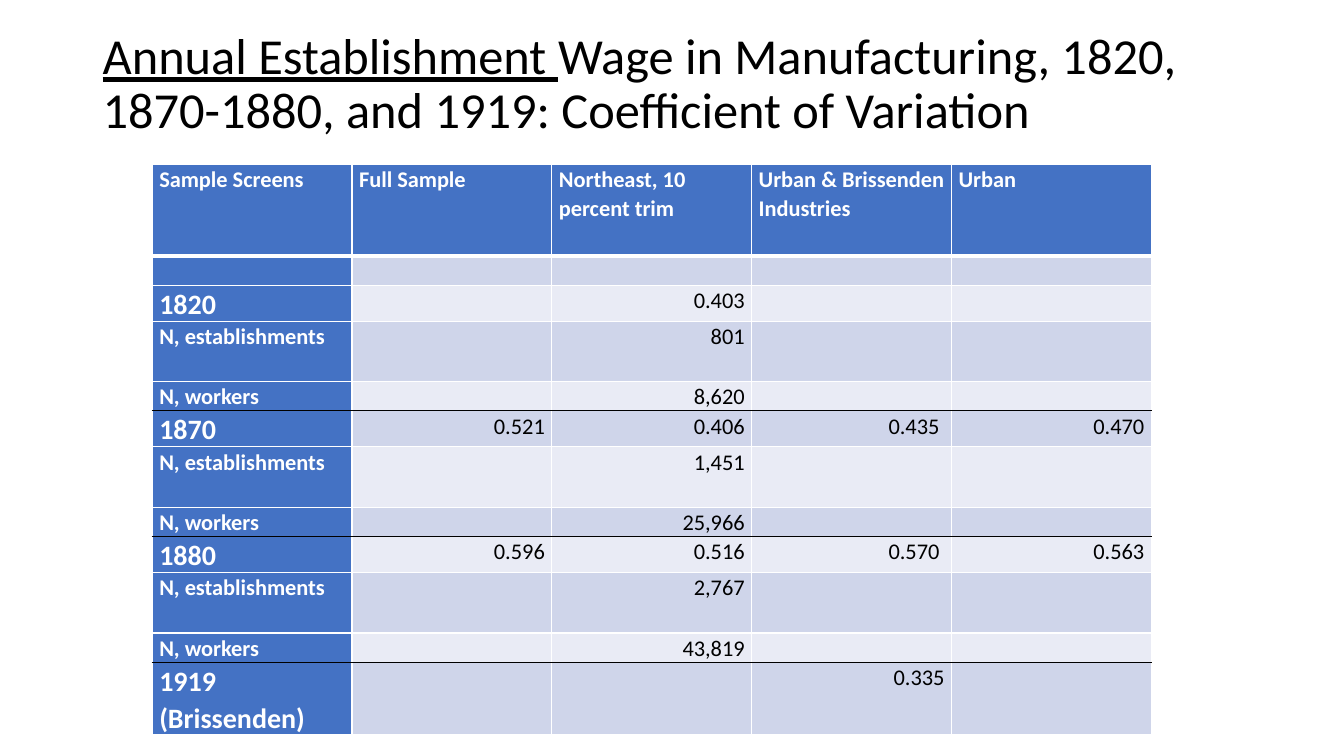
"""Builds a slide tabulating wage variation in manufacturing by year."""
from dataclasses import dataclass

from lxml import etree
from pptx import Presentation
from pptx import util as u
from pptx.dml import color
from pptx.enum import text
from pptx.oxml import ns


@dataclass(frozen=True)
class Theme:
    """Colours and type sizes of the slide."""
    font: str = "Calibri"
    black: str = "000000"
    white: str = "FFFFFF"
    accent: str = "4472C4"
    bands: tuple = ("CFD5EA", "E9EBF5")
    title: int = 36
    year: int = 20
    body: int = 16


HEADERS = ["Sample Screens", "Full Sample", "Northeast, 10 percent trim",
           "Urban & Brissenden Industries", "Urban"]
YEARS = [
    ("1820", ["", "0.403", "", ""], "801", "8,620"),
    ("1870", ["0.521", "0.406", "0.435 ", "0.470"], "1,451", "25,966"),
    ("1880", ["0.596", "0.516", "0.570 ", "0.563"], "2,767", "43,819"),
]


class Slide:
    """Holds the theme and the current slide."""

    def __init__(self, prs, theme):
        """Adds a blank slide."""
        self.theme = theme
        self.slide = prs.slides.add_slide(prs.slide_layouts[6])

    def run(self, p, words, size, ink, bold=False, underline=False):
        """Adds one styled run to a paragraph."""
        r = p.add_run()
        r.text = words
        r.font.name, r.font.size = self.theme.font, u.Pt(size)
        r.font.bold, r.font.underline = bold, underline
        r.font.color.rgb = color.RGBColor.from_string(ink)

    def title(self, underlined, rest):
        """Adds the title with its opening words underlined."""
        sp = self.slide.shapes.add_textbox(
            u.Inches(0.92), u.Inches(0.27), u.Inches(11.5), u.Inches(1.15))
        tf = sp.text_frame
        tf.word_wrap = True
        tf.vertical_anchor = text.MSO_ANCHOR.MIDDLE
        p = tf.paragraphs[0]
        p.line_spacing = 0.9
        size, ink = self.theme.title, self.theme.black
        self.run(p, underlined, size, ink, underline=True)
        self.run(p, rest, size, ink)

    def border(self, cell, side, ink, width):
        """Draws one edge of a table cell."""
        tc_pr = cell._tc.get_or_add_tcPr()
        ln = etree.SubElement(tc_pr, ns.qn(f"a:ln{side}"), w=str(u.Pt(width)))
        fill = etree.SubElement(ln, ns.qn("a:solidFill"))
        etree.SubElement(fill, ns.qn("a:srgbClr"), val=ink)

    def cell(self, cell, words, size, fill, labels, top, bottom):
        """Fills, borders and writes one table cell."""
        t = self.theme
        plain = (t.white, 1)
        for side, edge in zip("LRTB", (plain, plain, top, bottom)):
            self.border(cell, side, *edge)
        cell.fill.solid()
        cell.fill.fore_color.rgb = color.RGBColor.from_string(fill)
        cell.margin_left = cell.margin_right = u.Inches(0.07)
        cell.margin_top = cell.margin_bottom = 0
        p = cell.text_frame.paragraphs[0]
        p.line_spacing = 1.07
        if not labels:
            p.alignment = text.PP_ALIGN.RIGHT
        if words:
            self.run(p, words, size, t.white if labels else t.black, labels)
        else:
            etree.SubElement(p._p, ns.qn("a:endParaRPr"), sz=str(size * 100))

    def table(self, rows, heights):
        """Adds the table, ruling off each year after its workers row."""
        t = self.theme
        count = len(rows[0])
        table = self.slide.shapes.add_table(
            len(rows), count, u.Inches(1.51), u.Inches(1.63),
            u.Inches(9.91), u.Inches(sum(heights))).table
        table.first_row = table.horz_banding = False
        for column in table.columns:
            column.width = u.Inches(9.91 / count)
        top = (t.white, 1)
        for i, (row, height) in enumerate(zip(rows, heights)):
            table.rows[i].height = u.Inches(height)
            bottom = (t.white, 3 if i == 0 else 1)
            if row[0] == "N, workers":
                bottom = (t.black, 1)
            for j, words in enumerate(row):
                labels = i == 0 or j == 0
                size = t.year if words[:4].isdigit() and j == 0 else t.body
                fill = t.accent if labels else t.bands[(i - 1) % 2]
                self.cell(table.cell(i, j), words, size, fill, labels,
                          top, bottom)
            top = bottom


def main():
    """Builds and saves the presentation."""
    prs = Presentation()
    prs.slide_width, prs.slide_height = u.Inches(13.33), u.Inches(7.5)
    s = Slide(prs, Theme())
    s.title("Annual Establishment ",
            "Wage in Manufacturing, 1820, 1870-1880, and 1919: "
            "Coefficient of Variation")
    rows = [HEADERS, [""] * len(HEADERS)]
    heights = [0.91, 0.29]
    for year, values, establishments, workers in YEARS:
        rows += [[year, *values],
                 ["N, establishments", "", establishments, "", ""],
                 ["N, workers", "", workers, "", ""]]
        heights += [0.29, 0.6, 0.29]
    rows.append(["1919 (Brissenden)", "", "", "0.335", ""])
    heights.append(0.6)
    s.table(rows, heights)
    prs.save("out.pptx")


if __name__ == "__main__":
    main()
